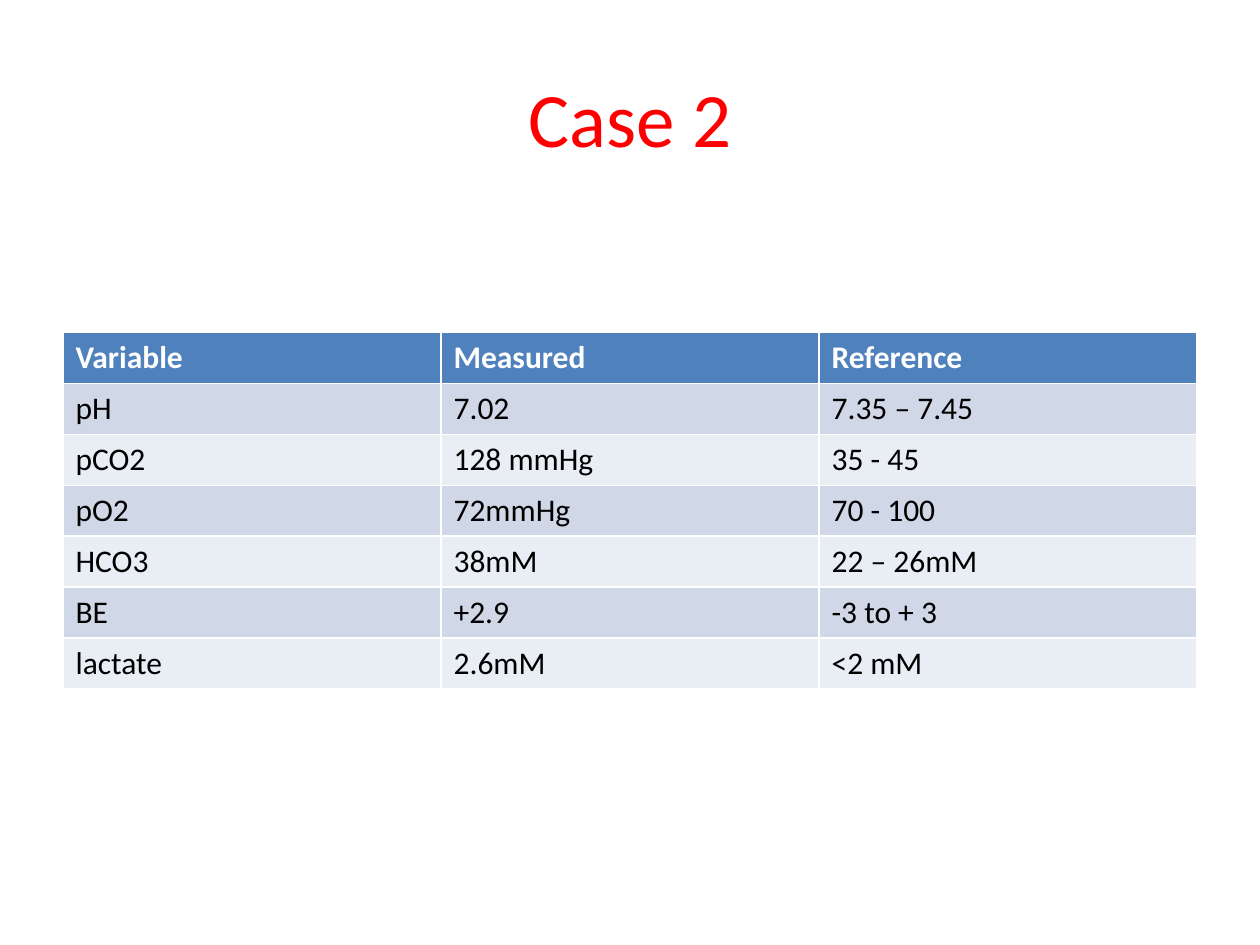
"""Build the Case 2 blood gas slide: a title above a table of measured and reference values."""
from pptx import Presentation
from pptx.dml.color import RGBColor
from pptx.enum.text import MSO_ANCHOR, PP_ALIGN
from pptx.util import Inches, Pt

TITLE = "Case 2"
BLOOD_GAS = [
    ("Variable", "Measured", "Reference"),
    ("pH", "7.02", "7.35 – 7.45"),
    ("pCO2", "128 mmHg", "35 - 45"),
    ("pO2", "72mmHg", "70 - 100"),
    ("HCO3", "38mM", "22 – 26mM"),
    ("BE", "+2.9", "-3 to + 3"),
    ("lactate", "2.6mM", "<2 mM"),
]

FONT = "Calibri"
RED = RGBColor(0xFF, 0x00, 0x00)
WHITE = RGBColor(0xFF, 0xFF, 0xFF)
BLACK = RGBColor(0x00, 0x00, 0x00)
HEADER_BLUE = RGBColor(0x4F, 0x81, 0xBD)
BANDS = (RGBColor(0xD0, 0xD8, 0xE8), RGBColor(0xE9, 0xED, 0xF4))

WIDTH, HEIGHT = Inches(10), Inches(7.5)
MARGIN = WIDTH // 20
CONTENT_WIDTH = WIDTH - 2 * MARGIN
TITLE_TOP, TITLE_HEIGHT = HEIGHT // 25, HEIGHT // 6
TABLE_TOP, TABLE_HEIGHT = Inches(2.64), Inches(2.83)


def write(frame, text, size, color, bold=False):
    run = frame.paragraphs[0].add_run()
    run.text = text
    run.font.name = FONT
    run.font.size = Pt(size)
    run.font.bold = bold
    run.font.color.rgb = color


def add_title(slide):
    title = slide.shapes.add_textbox(MARGIN, TITLE_TOP, CONTENT_WIDTH, TITLE_HEIGHT).text_frame
    title.word_wrap = True
    title.vertical_anchor = MSO_ANCHOR.MIDDLE
    title.paragraphs[0].alignment = PP_ALIGN.CENTER
    write(title, TITLE, 44, RED)


def add_blood_gas(slide):
    blood_gas = slide.shapes.add_table(
        len(BLOOD_GAS), len(BLOOD_GAS[0]), MARGIN, TABLE_TOP, CONTENT_WIDTH, TABLE_HEIGHT
    ).table
    for row, values in enumerate(BLOOD_GAS):
        header = row == 0
        for column, value in enumerate(values):
            cell = blood_gas.cell(row, column)
            cell.fill.solid()
            cell.fill.fore_color.rgb = HEADER_BLUE if header else BANDS[(row - 1) % 2]
            write(cell.text_frame, value, 18, WHITE if header else BLACK, bold=header)


def main():
    deck = Presentation()
    deck.slide_width, deck.slide_height = WIDTH, HEIGHT
    slide = deck.slides.add_slide(deck.slide_layouts[6])
    add_title(slide)
    add_blood_gas(slide)
    deck.save("out.pptx")


if __name__ == "__main__":
    main()
